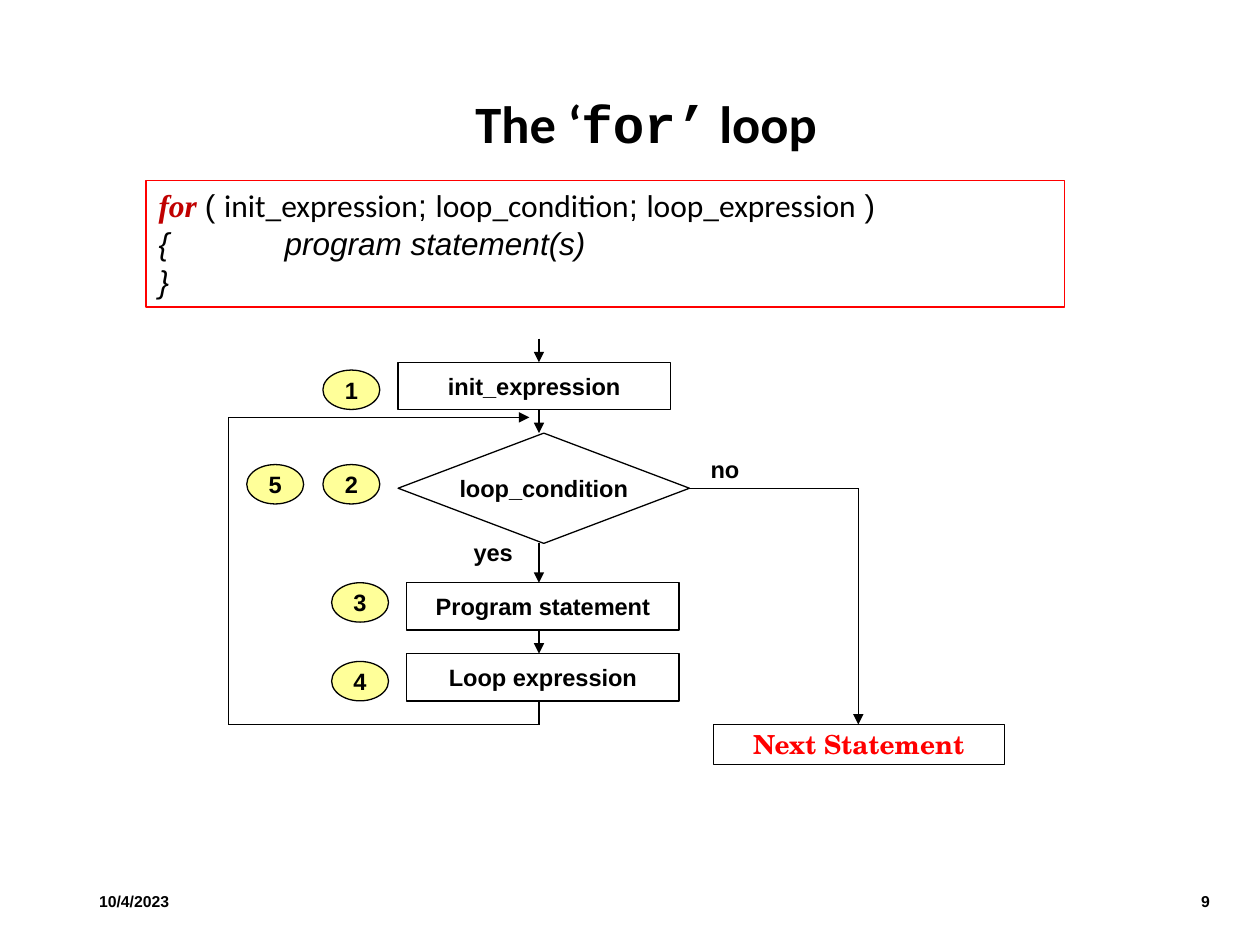
"""Build a slide that explains the 'for' loop with its syntax and a flowchart."""
from lxml import etree
from pptx import Presentation
from pptx import util as u
from pptx.dml.color import RGBColor
from pptx.enum import shapes, text
from pptx.oxml.ns import qn

BLACK = RGBColor(0, 0, 0)
RED = RGBColor(0xFF, 0, 0)
DARK_RED = RGBColor(0xC0, 0, 0)
YELLOW = RGBColor(0xFF, 0xFF, 0x99)

KINDS = shapes.MSO_SHAPE
LEFT, CENTER, RIGHT = text.PP_ALIGN.LEFT, text.PP_ALIGN.CENTER, text.PP_ALIGN.RIGHT
TOP, MIDDLE = text.MSO_ANCHOR.TOP, text.MSO_ANCHOR.MIDDLE

TITLE = [("The ‘", "Calibri"), ("for’", "Courier New"), (" loop", "Calibri")]
HEADER = [
    ("( ", "Arial"), ("init_expression", "Calibri"), ("; ", "Arial"),
    ("loop_condition", "Calibri"), ("; ", "Arial"),
    ("loop_expression", "Calibri"), (" )", "Arial"),
]
BODY = ["{\tprogram statement(s)", "}"]
FOOTERS = [("10/4/2023", 49.5, 68.5, LEFT), ("9", 670.5, 28, RIGHT)]
LABELS = [("yes", 263.5, 304, 37.5), ("no", 399, 256.5, 31)]

STEPS = [
    ("init_expression", KINDS.FLOWCHART_PROCESS, 227.5, 207, 155.5, 27),
    ("Program statement", KINDS.FLOWCHART_PROCESS, 232.5, 333, 155.5, 27),
    ("loop_condition", KINDS.FLOWCHART_DECISION, 227.5, 247.5, 166.5, 63),
    ("Loop expression", KINDS.FLOWCHART_PROCESS, 232.5, 373.5, 155.5, 27),
]
BADGES = [("1", 184.5, 211.5), ("2", 184.5, 265.5), ("3", 189.5, 333),
          ("4", 189.5, 378), ("5", 141, 265.5)]
BADGE_SIZE = (32.5, 22.5)

AXIS = 308
ROUTES = [
    [(AXIS, 193.5), (AXIS, 207)],
    [(AXIS, 234), (AXIS, 247.5)],
    [(AXIS, 310.5), (AXIS, 333)],
    [(AXIS, 360), (AXIS, 373.5)],
    [(AXIS, 400.5), (AXIS, 414), (130.5, 414), (130.5, 238.5), (302.5, 238.5)],
    [(394, 279), (490.5, 279), (490.5, 414)],
]


def points(*values):
    return [u.Pt(v) for v in values]


def add_run(p, words, font="Arial", size=13.5, color=BLACK, bold=True, italic=False):
    r = p.add_run()
    r.text = words
    r.font.name, r.font.size = font, u.Pt(size)
    r.font.bold, r.font.italic = bold, italic
    r.font.color.rgb = color


def start_text(sp, align=LEFT, anchor=MIDDLE, wrap=False):
    tf = sp.text_frame
    tf.word_wrap, tf.vertical_anchor = wrap, anchor
    tf.auto_size = text.MSO_AUTO_SIZE.NONE
    p = tf.paragraphs[0]
    p.alignment = align
    return p


def add_shape(s, kind, box, line=BLACK, fill=None, width=0.75):
    sp = s.shapes.add_shape(kind, *points(*box))
    sp.shadow.inherit = False
    if fill is None:
        sp.fill.background()
    else:
        sp.fill.solid()
        sp.fill.fore_color.rgb = fill
    sp.line.color.rgb, sp.line.width = line, u.Pt(width)
    return sp


def add_text(s, words, box, align=LEFT, anchor=TOP, size=13.5):
    sp = s.shapes.add_textbox(*points(*box))
    add_run(start_text(sp, align, anchor), words, size=size)


def add_route(s, route):
    for start, end in zip(route, route[1:]):
        line = s.shapes.add_connector(
            shapes.MSO_CONNECTOR.STRAIGHT, *points(*start, *end))
        line.line.color.rgb, line.line.width = BLACK, u.Pt(0.75)
        props = line.element.spPr
        if end == route[-1]:
            etree.SubElement(props.find(qn("a:ln")), qn("a:tailEnd"), type="triangle")
        etree.SubElement(props, qn("a:effectLst"))


def add_title(s):
    sp = s.shapes.title
    sp.left, sp.top, sp.width, sp.height = points(157.5, 52, 423.5, 40.5)
    p = start_text(sp, CENTER, wrap=True)
    p.line_spacing = 0.9
    for words, font in TITLE:
        add_run(p, words, font, 30)


def add_syntax(s):
    sp = add_shape(s, KINDS.RECTANGLE, (83.5, 103, 525, 72.5), RED)
    p = start_text(sp, anchor=TOP, wrap=True)
    add_run(p, "for ", "Times New Roman", 18, DARK_RED, italic=True)
    for words, font in HEADER:
        add_run(p, words, font, 18, bold=False)
    for words in BODY:
        p = sp.text_frame.add_paragraph()
        p.alignment = LEFT
        tabs = etree.SubElement(p._p.get_or_add_pPr(), qn("a:tabLst"))
        etree.SubElement(tabs, qn("a:tab"), pos=str(u.Pt(72)), algn="l")
        add_run(p, words, size=18, bold=False, italic=True)


def add_flowchart(s):
    for words, kind, *box in STEPS:
        add_run(start_text(add_shape(s, kind, box), CENTER), words)
    for route in ROUTES:
        add_route(s, route)
    for words, left, top, width in LABELS:
        add_text(s, words, (left, top, width, 24))
    for words, left, top in BADGES:
        sp = add_shape(s, KINDS.OVAL, (left, top, *BADGE_SIZE), fill=YELLOW)
        add_run(start_text(sp, CENTER), words)
    sp = add_shape(s, KINDS.RECTANGLE, (407.5, 414, 166.5, 22.5), width=0.25)
    add_run(start_text(sp, CENTER, wrap=True), "Next Statement", "TeX Gyre Schola", 15, RED)


def main():
    prs = Presentation()
    prs.slide_width, prs.slide_height = points(720, 540)
    s = prs.slides.add_slide(prs.slide_layouts[5])
    add_title(s)
    for words, left, width, align in FOOTERS:
        add_text(s, words, (left, 500.5, width, 29), align, MIDDLE, 9)
    add_syntax(s)
    add_flowchart(s)
    prs.save("out.pptx")


if __name__ == "__main__":
    main()
